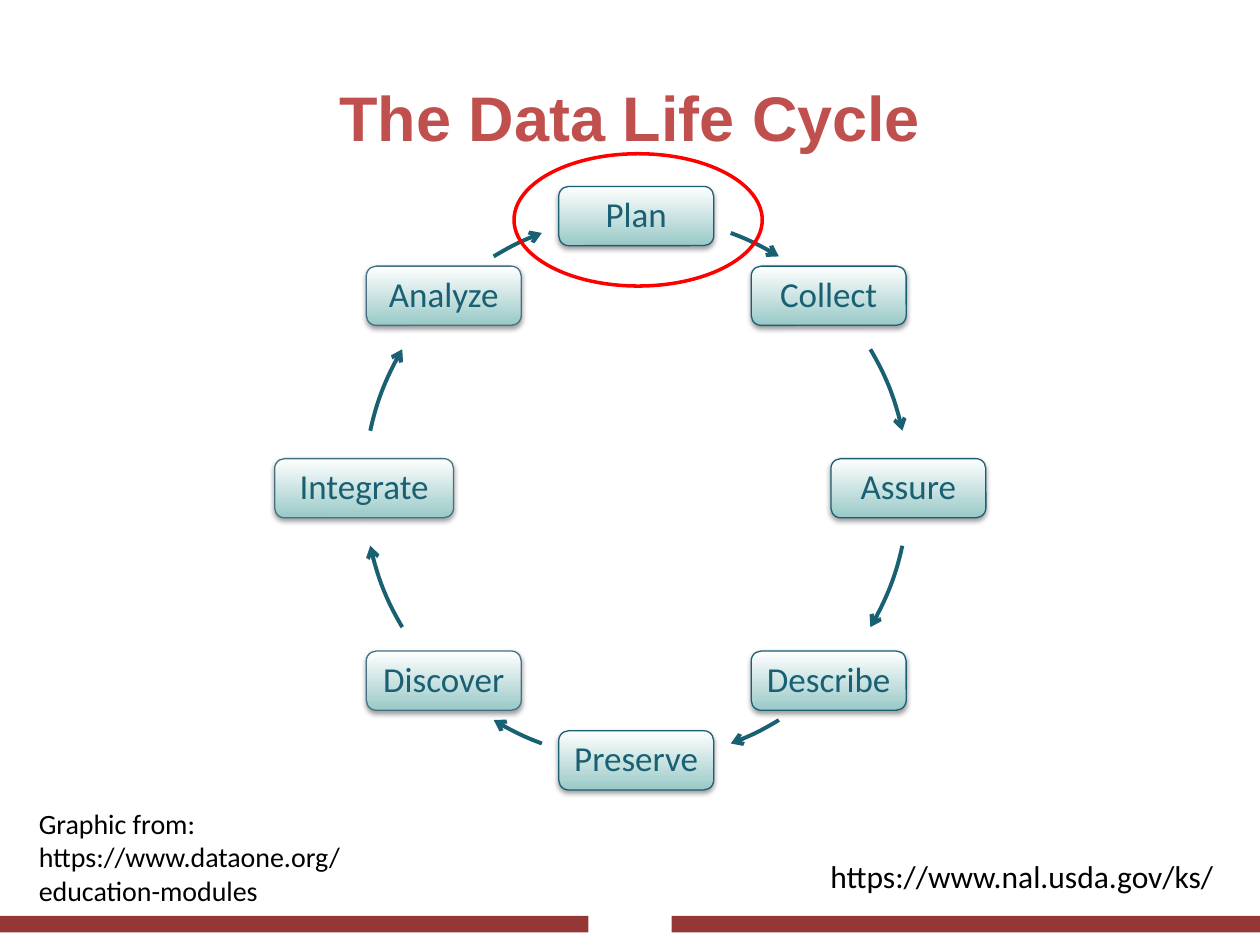
"""Build the data life cycle slide on a grid of 100 columns by 75 rows."""
from dataclasses import dataclass
from math import cos, radians, sin

from lxml import etree
from pptx import Presentation
from pptx.dml.color import RGBColor
from pptx.enum.shapes import MSO_SHAPE
from pptx.enum.text import MSO_ANCHOR, PP_ALIGN
from pptx.oxml.ns import qn
from pptx.util import Inches, Pt

RECTANGLE, ROUNDED = MSO_SHAPE.RECTANGLE, MSO_SHAPE.ROUNDED_RECTANGLE
OVAL, ARC = MSO_SHAPE.OVAL, MSO_SHAPE.ARC
LEFT, CENTER = PP_ALIGN.LEFT, PP_ALIGN.CENTER
TOP, MIDDLE = MSO_ANCHOR.TOP, MSO_ANCHOR.MIDDLE

COLUMNS, ROWS = 100, 75
CELL = Inches(0.1)
CENTER_COLUMN, CENTER_ROW, RADIUS = 50.5, 38.75, 21.6
STAGE_HEIGHT = 4.7
TEAL, SLATE, MAROON = "186072", "457184", "953735"


@dataclass(frozen=True)
class Area:
    """A rectangle in grid columns and rows."""
    column: float
    row: float
    columns: float
    rows: float


@dataclass(frozen=True)
class Stage:
    """A step of the cycle and the clockwise angles of the arrow after it."""
    name: str
    arrow_start: float
    arrow_end: float
    outline: str = TEAL
    columns: float = 12.3


@dataclass(frozen=True)
class Caption:
    """Text lines with their place and look."""
    lines: tuple[str, ...]
    area: Area
    size: float
    font: str = "Calibri"
    color: str = "000000"
    bold: bool = False
    align: PP_ALIGN = CENTER
    anchor: MSO_ANCHOR = MIDDLE


STAGES = (
    Stage("Plan", 20.3, 31.6),
    Stage("Collect", 59.3, 77.8),
    Stage("Assure", 102.2, 120.7),
    Stage("Describe", 148.4, 159.7),
    Stage("Preserve", 200.3, 211.6),
    Stage("Discover", 239.3, 257.8, SLATE),
    Stage("Integrate", 282.2, 300.7, SLATE, 14.2),
    Stage("Analyze", 328.4, 339.7, SLATE),
)
FOOTER_BARS = (Area(0, 72.7, 46.7, 1.3), Area(53.3, 72.7, 46.7, 1.3))
PLAN_HIGHLIGHT = Area(40.8, 12.2, 19.7, 10.5)
CAPTIONS = (
    Caption(("https://www.nal.usda.gov/ks/",), Area(64.2, 67.5, 33.8, 4), 18),
    Caption(("Graphic from: https://www.dataone.org/", "education-modules"),
            Area(2.1, 63.5, 38.7, 9.1), 16, align=LEFT, anchor=TOP),
    Caption(("The Data Life Cycle",), Area(5, 3, 90, 12.5), 36, "Arial",
            "C0504D", True),
)


def rgb(color: str) -> RGBColor:
    """Turn a hex string into a colour."""
    return RGBColor.from_string(color)


def place(area: Area) -> tuple[int, ...]:
    """Turn grid units into slide lengths."""
    return tuple(round(units * CELL) for units in
                 (area.column, area.row, area.columns, area.rows))


def add_outline(slide, kind: MSO_SHAPE, area: Area, color: str, width: float):
    """Draw an unfilled, unshadowed preset shape with a coloured line."""
    shape = slide.shapes.add_shape(kind, *place(area))
    shape.shadow.inherit = False
    shape.fill.background()
    shape.line.color.rgb = rgb(color)
    shape.line.width = Pt(width)
    return shape


def write(paragraph, words: str, size: float, font: str, color: str,
          bold: bool = False) -> None:
    """Add one styled run to a paragraph."""
    run = paragraph.add_run()
    run.text = words
    run.font.size, run.font.name, run.font.bold = Pt(size), font, bold
    run.font.color.rgb = rgb(color)


def add_soft_shadow(shape) -> None:
    """Cast a faint shadow straight down."""
    effects = shape._element.spPr.find(qn("a:effectLst"))
    shadow = etree.SubElement(
        effects, qn("a:outerShdw"), blurRad=str(Pt(3.1)), dist=str(Pt(1.6)),
        dir="5400000", rotWithShape="0")
    black = etree.SubElement(shadow, qn("a:srgbClr"), val="000000")
    etree.SubElement(black, qn("a:alpha"), val="38000")


def add_stage(slide, stage: Stage, angle: float) -> None:
    """Draw a stage box centred on the circle at a clockwise angle."""
    column = CENTER_COLUMN + RADIUS * sin(radians(angle))
    row = CENTER_ROW - RADIUS * cos(radians(angle))
    area = Area(column - stage.columns / 2, row - STAGE_HEIGHT / 2,
                stage.columns, STAGE_HEIGHT)
    box = add_outline(slide, ROUNDED, area, stage.outline, 0.75)
    box.fill.gradient()
    box.fill.gradient_angle = 270
    for stop, position, color in zip(box.fill.gradient_stops, (0, 1),
                                     ("FFFFFF", "99C9C7")):
        stop.position = position
        stop.color.rgb = rgb(color)
    add_soft_shadow(box)
    frame = box.text_frame
    frame.word_wrap, frame.vertical_anchor = True, MIDDLE
    frame.margin_left = frame.margin_right = CELL
    label = frame.paragraphs[0]
    label.alignment, label.line_spacing = CENTER, 0.9
    write(label, stage.name, 20, "Calibri", TEAL)


def add_arrow(slide, start: float, end: float) -> None:
    """Draw an arc of the circle with an arrowhead at its end."""
    circle = Area(CENTER_COLUMN - RADIUS, CENTER_ROW - RADIUS,
                  2 * RADIUS, 2 * RADIUS)
    arc = add_outline(slide, ARC, circle, TEAL, 2.25)
    for index, angle in enumerate((start, end)):
        arc.adjustments[index] = (angle - 90) % 360 * 0.6
    etree.SubElement(arc.line._get_or_add_ln(), qn("a:tailEnd"), type="arrow")


def add_caption(slide, caption: Caption) -> None:
    """Write a caption, one paragraph per line."""
    frame = slide.shapes.add_textbox(*place(caption.area)).text_frame
    frame.word_wrap, frame.vertical_anchor = True, caption.anchor
    for index, words in enumerate(caption.lines):
        paragraph = frame.add_paragraph() if index else frame.paragraphs[0]
        paragraph.alignment = caption.align
        write(paragraph, words, caption.size, caption.font, caption.color,
              caption.bold)


def main() -> None:
    """Build and save the slide."""
    deck = Presentation()
    deck.slide_width, deck.slide_height = COLUMNS * CELL, ROWS * CELL
    slide = deck.slides.add_slide(deck.slide_layouts[6])
    for area in FOOTER_BARS:
        bar = add_outline(slide, RECTANGLE, area, MAROON, 0.75)
        bar.fill.solid()
        bar.fill.fore_color.rgb = rgb(MAROON)
        bar.line.fill.background()
    for index, stage in enumerate(STAGES):
        add_stage(slide, stage, index * 360 / len(STAGES))
        add_arrow(slide, stage.arrow_start, stage.arrow_end)
    add_outline(slide, OVAL, PLAN_HIGHLIGHT, "FF0000", 2)
    for caption in CAPTIONS:
        add_caption(slide, caption)
    deck.save("out.pptx")


if __name__ == "__main__":
    main()
